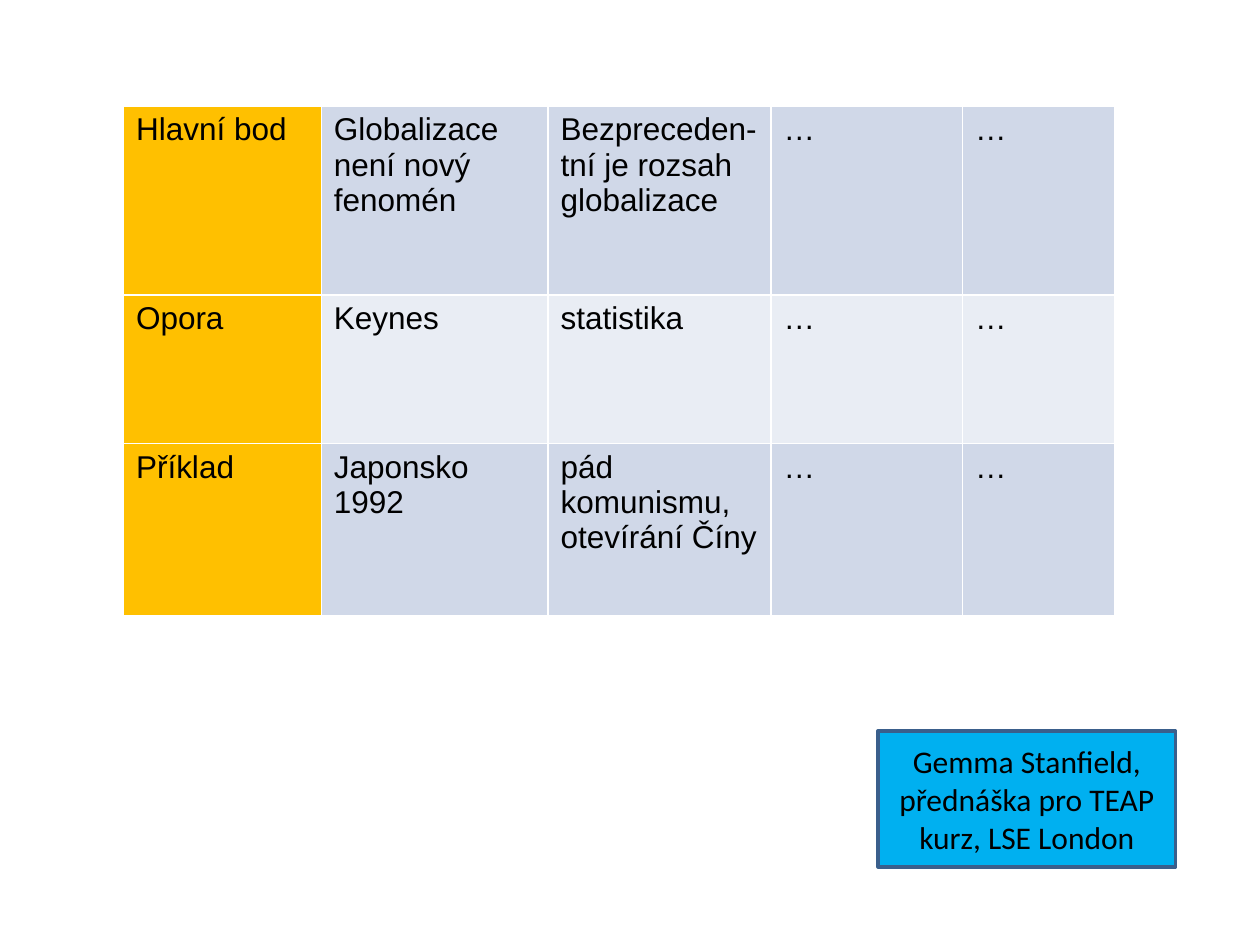
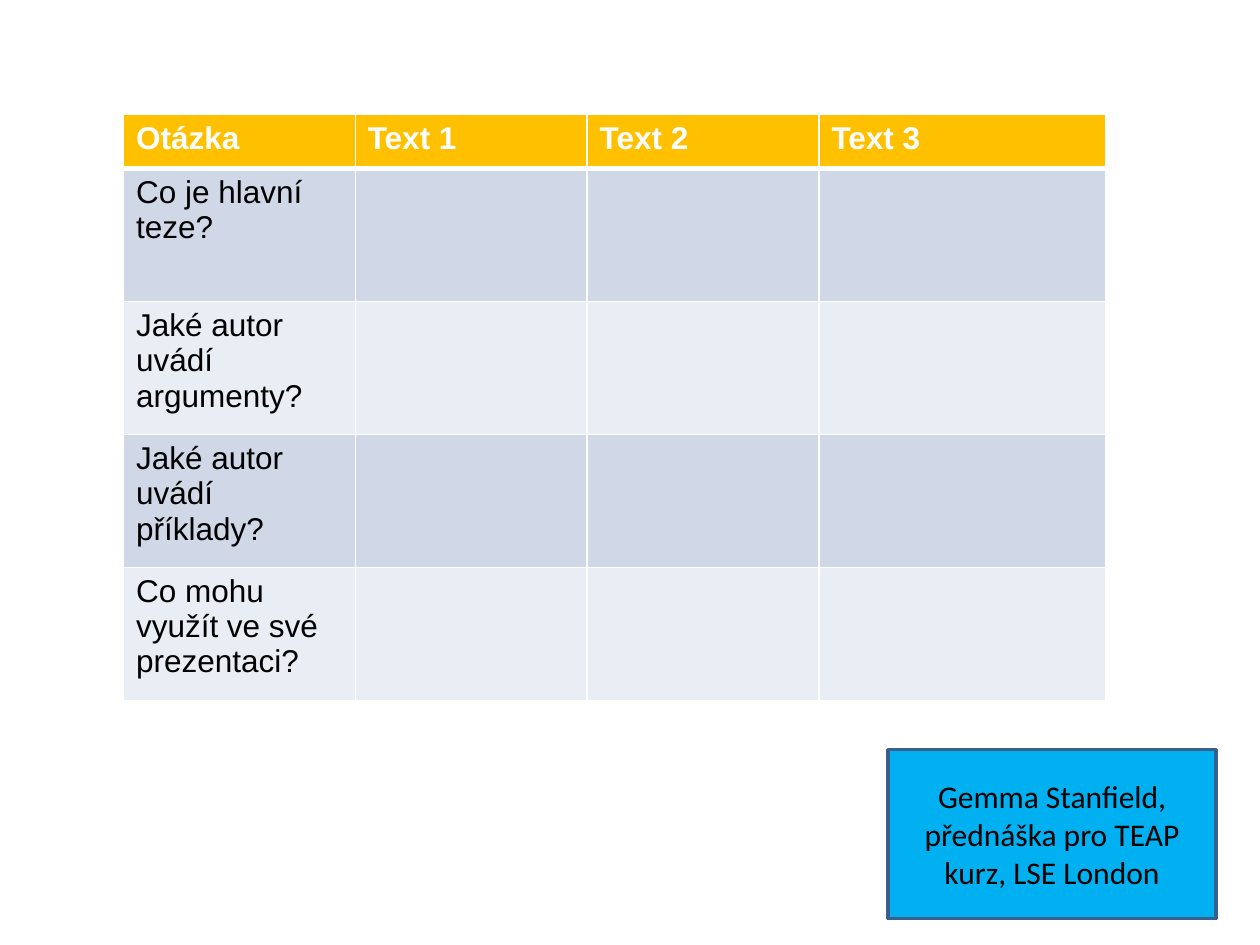
from pptx import Presentation
from pptx.dml.color import RGBColor
from pptx.enum.shapes import MSO_SHAPE
from pptx.enum.text import MSO_ANCHOR, PP_ALIGN
from pptx.oxml.ns import qn
from pptx.util import Inches, Pt
from lxml.etree import SubElement

# Slide grid: 100 columns by 75 rows of square units
COLUMNS, ROWS = 100, 75
SLIDE_WIDTH, SLIDE_HEIGHT = Inches(10), Inches(7.5)

WHITE, BLACK = "FFFFFF", "000000"
GOLD, SKY, NAVY = "FFC000", "00B0F0", "3A5F8C"
BANDS = ("D0D8E8", "E9EDF4")
CREDIT = "Gemma Stanfield, přednáška pro TEAP kurz, LSE London"


def color(hex_string):
    return RGBColor.from_string(hex_string)


def across(units):
    return round(SLIDE_WIDTH * units / COLUMNS)


def down(units):
    return round(SLIDE_HEIGHT * units / ROWS)


def write(frame, text, font="Arial", size=18, ink=BLACK, bold=False,
          align=PP_ALIGN.LEFT):
    """Fill a text frame, one paragraph for each line of the text."""
    frame.word_wrap = True
    frame.text = text
    for para in frame.paragraphs:
        para.alignment = align
        for span in para.runs:
            span.font.name = font
            span.font.size = Pt(size)
            span.font.bold = bold
            span.font.color.rgb = color(ink)


def draw_borders(cell, top=1, bottom=1):
    """Draw white cell borders, with widths in points."""
    properties = cell._tc.get_or_add_tcPr()
    for side, width in (("L", 1), ("R", 1), ("T", top), ("B", bottom)):
        line = SubElement(properties, qn(f"a:ln{side}"), w=str(Pt(width)))
        fill = SubElement(line, qn("a:solidFill"))
        SubElement(fill, qn("a:srgbClr"), val=WHITE)


def add_grid_table(page, left, top, widths, heights, texts, header=False):
    """Add a banded table with a gold header row or a gold first column."""
    table = page.shapes.add_table(
        len(heights), len(widths), across(left), down(top),
        across(sum(widths)), down(sum(heights))).table
    table.first_row = table.horz_banding = False
    for column, width in zip(table.columns, widths):
        column.width = across(width)
    for row, height in zip(table.rows, heights):
        row.height = down(height)

    for r, row in enumerate(table.rows):
        for c, cell in enumerate(row.cells):
            is_header = header and r == 0
            is_gold = is_header or (not header and c == 0)
            draw_borders(cell, top=3 if header and r == 1 else 1,
                         bottom=3 if is_header else 1)
            cell.fill.solid()
            band = BANDS[(r - header) % 2]
            cell.fill.fore_color.rgb = color(GOLD if is_gold else band)
            if c < len(texts[r]):
                write(cell.text_frame, texts[r][c], bold=is_header,
                      ink=WHITE if is_header else BLACK)


def add_credit(page, left, top, width, height):
    """Add the blue box that names the source of the lecture."""
    box = page.shapes.add_shape(MSO_SHAPE.RECTANGLE, across(left), down(top),
                                across(width), down(height))
    box.shadow.inherit = False
    box.fill.solid()
    box.fill.fore_color.rgb = color(SKY)
    box.line.color.rgb = color(NAVY)
    box.line.width = Pt(2)
    box.text_frame.vertical_anchor = MSO_ANCHOR.MIDDLE
    write(box.text_frame, CREDIT, font="Calibri", align=PP_ALIGN.CENTER)


def build_outline_slide(page):
    """Main points of the lecture with their support and examples."""
    add_grid_table(
        page, 9.8, 8.4,
        widths=[15.7, 18, 17.7, 15.2, 12.1], heights=[15, 11.8, 13.7],
        texts=[
            ["Hlavní bod", "Globalizace není nový fenomén",
             "Bezpreceden-tní je rozsah globalizace", "…", "…"],
            ["Opora", "Keynes", "statistika", "…", "…"],
            ["Příklad", "Japonsko 1992",
             "pád komunismu,\notevírání Číny", "…", "…"],
        ])
    add_credit(page, 69.7, 58, 23.6, 10.8)


def build_questions_slide(page):
    """Worksheet that compares three texts by four questions."""
    add_grid_table(
        page, 9.8, 9.1, header=True,
        widths=[18.4] * 3 + [22.8], heights=[4.3] + [10.55] * 4,
        texts=[
            ["Otázka", "Text 1", "Text 2", "Text 3"],
            ["Co je hlavní teze?"],
            ["Jaké autor uvádí argumenty?"],
            ["Jaké autor uvádí příklady?"],
            ["Co mohu využít ve své prezentaci?"],
        ])
    add_credit(page, 70.5, 59.5, 26, 13.4)


def main():
    deck = Presentation()
    deck.slide_width, deck.slide_height = SLIDE_WIDTH, SLIDE_HEIGHT
    blank = deck.slide_layouts.get_by_name("Blank")
    for build in (build_outline_slide, build_questions_slide):
        build(deck.slides.add_slide(blank))
    deck.save("out.pptx")


if __name__ == "__main__":
    main()
